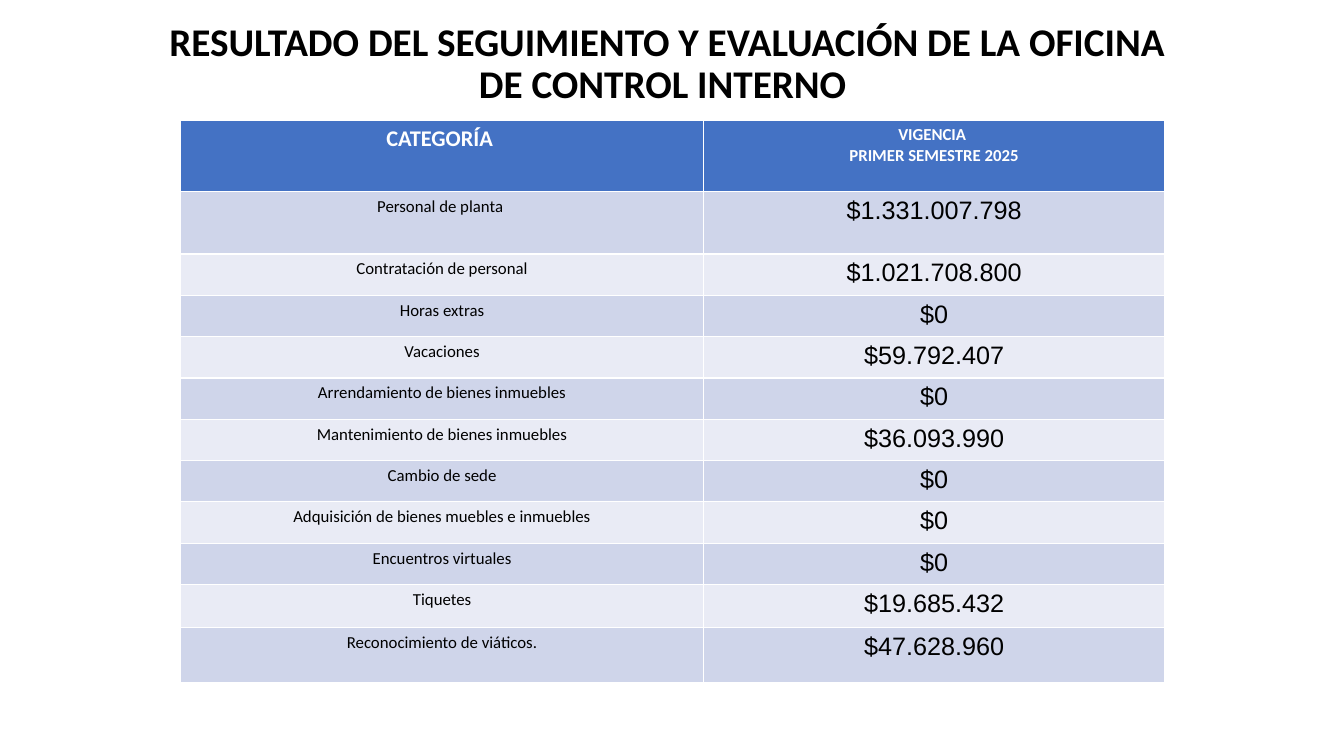
from pptx import Presentation
from pptx.dml.color import RGBColor
from pptx.enum.text import MSO_ANCHOR, PP_ALIGN
from pptx.util import Inches, Pt

TITLE = "RESULTADO DEL SEGUIMIENTO Y EVALUACIÓN DE LA OFICINA DE CONTROL INTERNO "
HEADERS = ("CATEGORÍA ", "VIGENCIA \nPRIMER SEMESTRE 2025")
EXPENSES = (
    ("Personal de planta ", "$1.331.007.798"),
    ("Contratación de personal", "$1.021.708.800"),
    ("Horas extras", "$0"),
    ("Vacaciones", "$59.792.407"),
    ("Arrendamiento de bienes inmuebles", "$0"),
    ("Mantenimiento de bienes inmuebles", "$36.093.990"),
    ("Cambio de sede", "$0"),
    ("Adquisición de bienes muebles e inmuebles", "$0"),
    ("Encuentros virtuales", "$0"),
    ("Tiquetes", "$19.685.432"),
    ("Reconocimiento de viáticos.", "$47.628.960"),
)
COLUMN_WIDTHS = (5.19, 4.57)
ROW_HEIGHTS = (0.71, 0.62, *[0.41] * 8, 0.43, 0.54)
HEADER_FILL = "4472C4"
BAND_FILLS = ("CFD5EA", "E9EBF5")

TITLE_FORMAT = {"name": "Calibri", "size": Pt(28), "bold": True}
HEADER_FORMATS = (
    {"name": "Calibri", "size": Pt(16), "bold": True},
    {"name": "Calibri", "size": Pt(12), "bold": True},
)
BODY_FORMATS = (
    {"name": "Calibri", "size": Pt(12), "bold": False},
    {"name": "Arial", "size": Pt(18), "bold": False},
)


def paint(color_format, color):
    """Apply a hex color to a fill color or a font color."""
    color_format.rgb = RGBColor.from_string(color)


def write_text(text_frame, text, formats, color):
    """Write centered paragraphs in one character format."""
    text_frame.text = text
    for paragraph in text_frame.paragraphs:
        paragraph.alignment = PP_ALIGN.CENTER
        for run in paragraph.runs:
            for attribute, value in formats.items():
                setattr(run.font, attribute, value)
            paint(run.font.color, color)


def add_title(slide, left, top, width, height):
    """Place the slide title, vertically centered in its box."""
    text_box = slide.shapes.add_textbox(
        Inches(left), Inches(top), Inches(width), Inches(height))
    text_frame = text_box.text_frame
    text_frame.word_wrap = True
    text_frame.vertical_anchor = MSO_ANCHOR.MIDDLE
    write_text(text_frame, TITLE, TITLE_FORMAT, "000000")
    text_frame.paragraphs[0].line_spacing = 0.9


def add_expense_table(slide, left, top):
    """Place the banded table of expenses by category."""
    rows = (HEADERS, *EXPENSES)
    table = slide.shapes.add_table(
        len(rows), len(HEADERS), Inches(left), Inches(top),
        Inches(sum(COLUMN_WIDTHS)), Inches(sum(ROW_HEIGHTS))).table
    for column, width in zip(table.columns, COLUMN_WIDTHS):
        column.width = Inches(width)
    for row_index, texts in enumerate(rows):
        table.rows[row_index].height = Inches(ROW_HEIGHTS[row_index])
        is_header = row_index == 0
        fill_color = HEADER_FILL if is_header else BAND_FILLS[(row_index - 1) % 2]
        text_color = "FFFFFF" if is_header else "000000"
        formats = HEADER_FORMATS if is_header else BODY_FORMATS
        for column_index, text in enumerate(texts):
            cell = table.cell(row_index, column_index)
            cell.fill.solid()
            paint(cell.fill.fore_color, fill_color)
            write_text(cell.text_frame, text, formats[column_index], text_color)


def main():
    """Build and save the presentation."""
    presentation = Presentation()
    presentation.slide_width = Inches(13.33)
    presentation.slide_height = Inches(7.5)
    slide = presentation.slides.add_slide(presentation.slide_layouts[6])
    add_title(slide, 1.56, 0.1, 10.11, 1.09)
    add_expense_table(slide, 1.79, 1.19)
    presentation.save("out.pptx")


if __name__ == "__main__":
    main()
